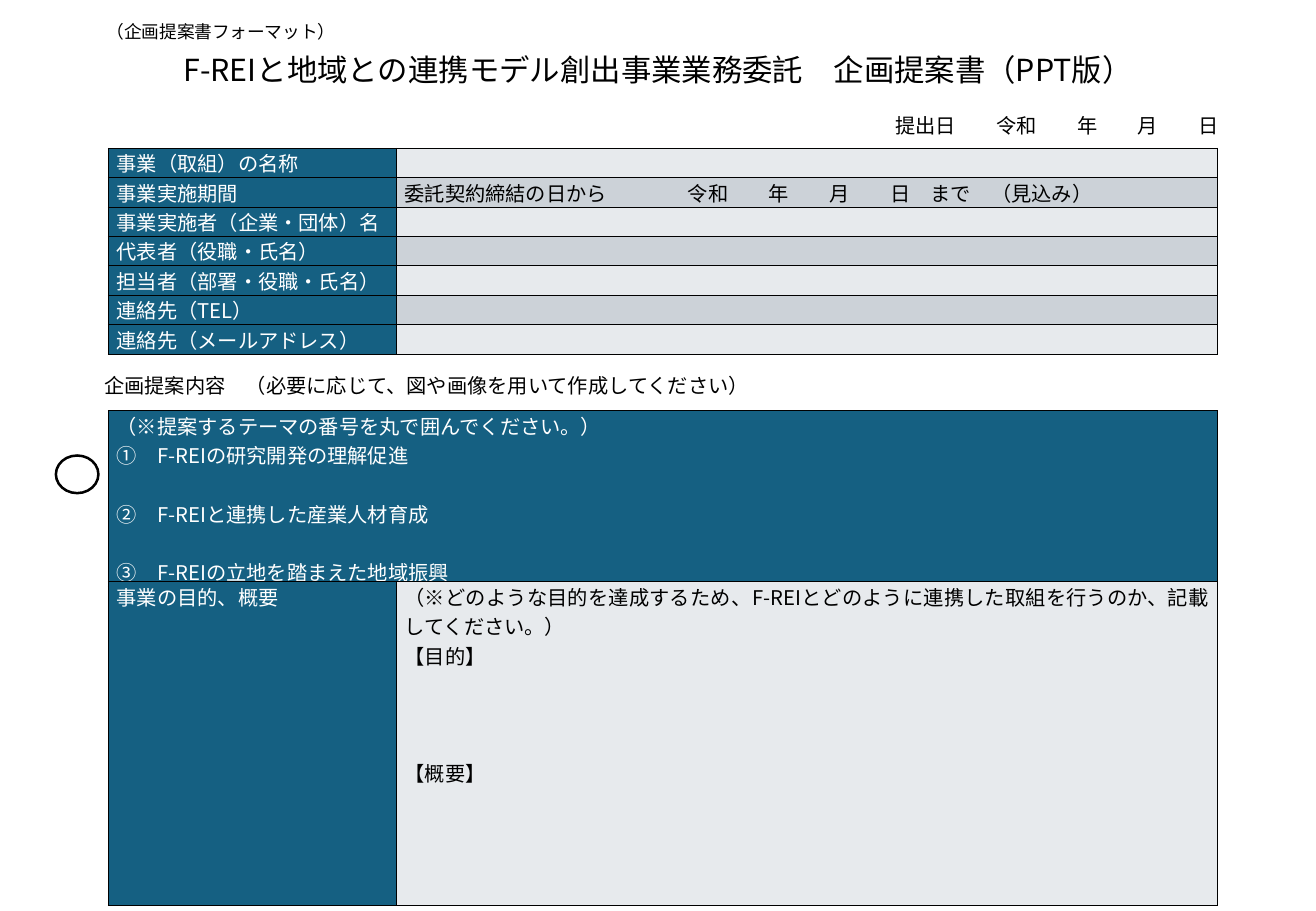
from dataclasses import dataclass

from pptx import Presentation
from pptx.dml.color import RGBColor as Rgb
from pptx.enum.shapes import MSO_SHAPE as Shape
from pptx.enum.text import MSO_ANCHOR as Anchor, PP_ALIGN as Align
from pptx.oxml.xmlchemy import OxmlElement as Element
from pptx.slide import Slide
from pptx.util import Inches, Pt


@dataclass(frozen=True)
class Theme:
    font: str = "Noto Sans CJK JP"
    ink: str = "000000"
    white: str = "FFFFFF"
    heading: str = "156082"
    light: str = "E7EAED"
    dark: str = "CCD2D8"
    title: float = 18
    body: float = 12
    note: float = 10.5
    border: float = 0.5
    ring: float = 1.5
    blank_line: float = 17.4


THEME = Theme()


@dataclass(frozen=True)
class Label:
    text: str
    box: tuple[float, float, float, float]
    size: float = THEME.body
    align: Align = Align.LEFT
    anchor: Anchor = Anchor.TOP
    spacing: float = 0.9


@dataclass(frozen=True)
class Line:
    text: str
    blank_lines_before: int = 0


@dataclass(frozen=True)
class Entry:
    fill: str
    lines: tuple[Line, ...] = ()


@dataclass(frozen=True)
class Form:
    top: float
    row_height: float
    columns: tuple[float, ...]
    rows: list[tuple[Entry, ...]]


FORM_LEFT = 0.89
FORM_COLUMNS = (2.37, 6.76)

LABELS = [
    Label("（企画提案書フォーマット）", (0.78, 0.16, 3.1, 0.25), THEME.note, spacing=0.8),
    Label("F-REIと地域との連携モデル創出事業業務委託　企画提案書（PPT版）",
          (0.81, 0.32, 9.21, 0.45), THEME.title, Align.CENTER, Anchor.BOTTOM),
    Label("提出日　　令和　　年　　月　　日", (6.48, 0.91, 3.65, 0.34), align=Align.RIGHT),
    Label("企画提案内容　（必要に応じて、図や画像を用いて作成してください）",
          (0.76, 3.05, 6.34, 0.34)),
]

APPLICANT_FIELDS = [
    ("事業（取組）の名称", ""),
    ("事業実施期間", "委託契約締結の日から　　　　令和　　年　　月　　日　まで　（見込み）"),
    ("事業実施者（企業・団体）名", ""),
    ("代表者（役職・氏名）", ""),
    ("担当者（部署・役職・氏名）", ""),
    ("連絡先（TEL）", ""),
    ("連絡先（メールアドレス）", ""),
]

THEMES = (
    Line("（※提案するテーマの番号を丸で囲んでください。）"),
    Line("①　F-REIの研究開発の理解促進"),
    Line("②　F-REIと連携した産業人材育成", 1),
    Line("③　F-REIの立地を踏まえた地域振興", 1),
)

OUTLINE = (
    Line("（※どのような目的を達成するため、F-REIとどのように連携した取組を行うのか、記載してください。）"),
    Line("【目的】"),
    Line("【概要】", 3),
)


def applicant_rows() -> list[tuple[Entry, ...]]:
    return [
        (Entry(THEME.heading, (Line(name),)),
         Entry(THEME.dark if index % 2 else THEME.light, (Line(value),) if value else ()))
        for index, (name, value) in enumerate(APPLICANT_FIELDS)
    ]


FORMS = [
    Form(1.22, 0.24, FORM_COLUMNS, applicant_rows()),
    Form(3.38, 1.41, (sum(FORM_COLUMNS),), [(Entry(THEME.heading, THEMES),)]),
    Form(4.79, 2.66, FORM_COLUMNS,
         [(Entry(THEME.heading, (Line("事業の目的、概要"),)), Entry(THEME.light, OUTLINE))]),
]


def apply(target, values: dict) -> None:
    for name, value in values.items():
        setattr(target, name, value)


def write(paragraph, text: str, size: float, color: str, **layout) -> None:
    """Add one run in the theme font for Latin and East Asian text alike."""
    apply(paragraph, layout)
    run = paragraph.add_run()
    run.text = text
    apply(run.font, {"name": THEME.font, "size": Pt(size), "bold": False})
    run.font.color.rgb = Rgb.from_string(color)
    east_asian = Element("a:ea")
    east_asian.set("typeface", THEME.font)
    run.font._element.append(east_asian)


def draw_label(slide: Slide, label: Label) -> None:
    frame = slide.shapes.add_textbox(*map(Inches, label.box)).text_frame
    apply(frame, {"word_wrap": True, "vertical_anchor": label.anchor})
    write(frame.paragraphs[0], label.text, label.size, THEME.ink,
          alignment=label.align, line_spacing=label.spacing)


def draw_borders(cell) -> None:
    properties = cell._tc.get_or_add_tcPr()
    for side in ("a:lnL", "a:lnR", "a:lnT", "a:lnB"):
        edge, fill, color = map(Element, (side, "a:solidFill", "a:srgbClr"))
        edge.set("w", str(Pt(THEME.border)))
        color.set("val", THEME.ink)
        fill.append(color)
        edge.append(fill)
        properties.append(edge)


def fill_entry(cell, entry: Entry) -> None:
    apply(cell, {"margin_left": Inches(0.07), "margin_right": Inches(0.07),
                 "margin_top": 0, "margin_bottom": 0})
    draw_borders(cell)
    cell.fill.solid()
    cell.fill.fore_color.rgb = Rgb.from_string(entry.fill)
    frame = cell.text_frame
    color = THEME.white if entry.fill == THEME.heading else THEME.ink
    for index, line in enumerate(entry.lines):
        paragraph = frame.add_paragraph() if index else frame.paragraphs[0]
        write(paragraph, line.text, THEME.body, color, alignment=Align.JUSTIFY,
              space_before=Pt(line.blank_lines_before * THEME.blank_line))
    if not entry.lines:
        # An empty cell needs its own type size, or its row grows.
        end = Element("a:endParaRPr")
        end.set("sz", str(int(THEME.body * 100)))
        frame.paragraphs[0]._p.append(end)


def draw_form(slide: Slide, form: Form) -> None:
    box = (FORM_LEFT, form.top, sum(form.columns), form.row_height * len(form.rows))
    table = slide.shapes.add_table(
        len(form.rows), len(form.columns), *map(Inches, box)).table
    apply(table, {"first_row": False, "horz_banding": False})
    for column, width in zip(table.columns, form.columns):
        column.width = Inches(width)
    for row, entries in zip(table.rows, form.rows):
        row.height = Inches(form.row_height)
        for cell, entry in zip(row.cells, entries):
            fill_entry(cell, entry)


def draw_selection_ring(slide: Slide) -> None:
    ring = slide.shapes.add_shape(Shape.OVAL, *map(Inches, (0.46, 3.75, 0.35, 0.31)))
    ring.shadow.inherit = False
    ring.fill.background()
    ring.line.color.rgb = Rgb.from_string(THEME.ink)
    ring.line.width = Pt(THEME.ring)


def main() -> None:
    deck = Presentation()
    apply(deck, {"slide_width": Inches(10.83), "slide_height": Inches(7.5)})
    slide = deck.slides.add_slide(deck.slide_layouts[6])
    for form in FORMS:
        draw_form(slide, form)
    for label in LABELS:
        draw_label(slide, label)
    draw_selection_ring(slide)
    deck.save("out.pptx")


if __name__ == "__main__":
    main()
